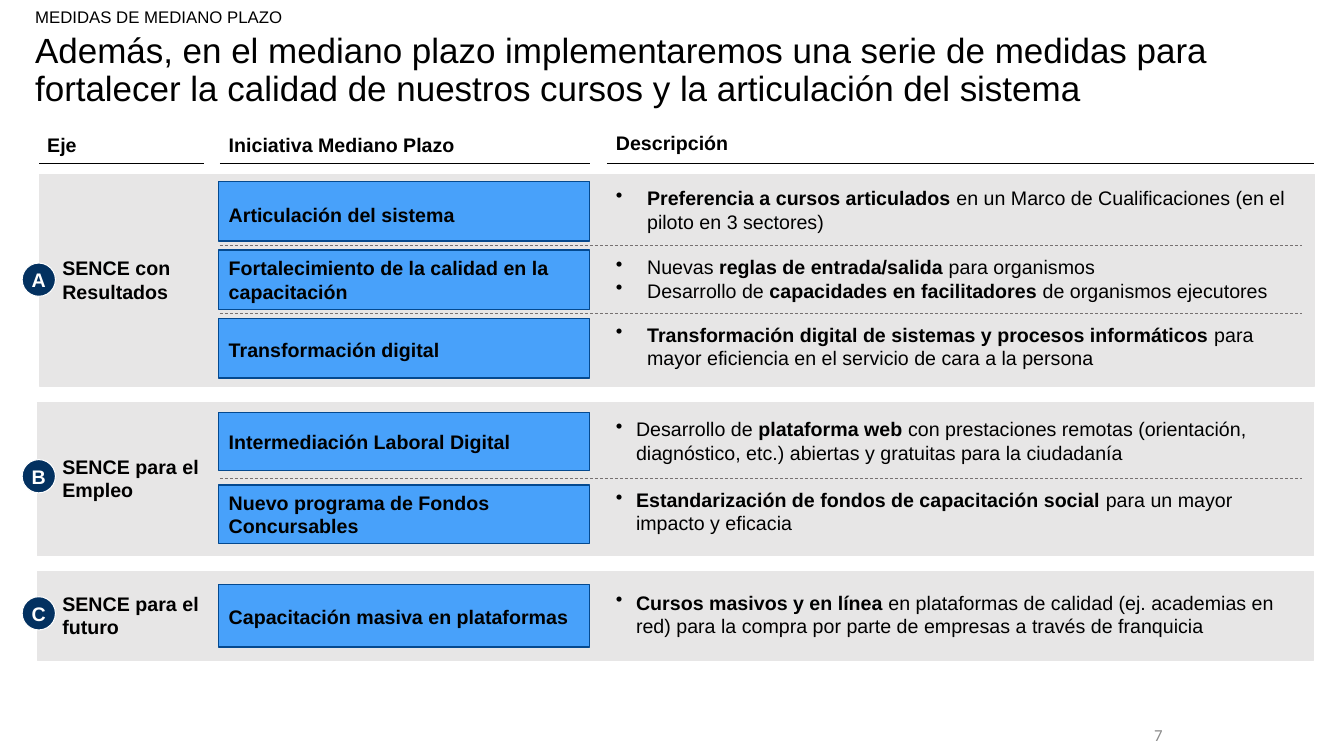
import pptx
import pptx.util
import pptx.dml.color
import pptx.enum.dml
import pptx.enum.shapes
import pptx.enum.text
from lxml import etree

Inches, Pt = pptx.util.Inches, pptx.util.Pt
SHAPE = pptx.enum.shapes.MSO_SHAPE
ALIGN = pptx.enum.text.PP_ALIGN
ANCHOR = pptx.enum.text.MSO_ANCHOR
COLORS = {"black": "000000", "white": "FFFFFF", "band": "E7E6E6", "blue": "48A1FA",
          "blue_edge": "04498F", "navy": "033160", "dash": "767171", "number": "8C8C8C"}

deck = pptx.Presentation()
deck.slide_width, deck.slide_height = Inches(13.33), Inches(7.5)
page = deck.slides.add_slide(deck.slide_layouts[6])


def color(name):
    return pptx.dml.color.RGBColor.from_string(COLORS[name])


def write(box, paragraphs, size=14, ink="black", font="Arial", align=ALIGN.LEFT,
          anchor=ANCHOR.TOP, wrap=True, indent=0):
    """Fill a box with paragraphs, each a list of (text, bold) runs; an indent adds bullets."""
    frame = box.text_frame
    frame.word_wrap = wrap
    frame.vertical_anchor = anchor
    for index, runs in enumerate(paragraphs):
        para = frame.add_paragraph() if index else frame.paragraphs[0]
        para.alignment = align
        if indent:
            props = para._p.get_or_add_pPr()
            props.set("marL", str(Inches(indent)))
            props.set("indent", str(-Inches(indent)))
            bullet = etree.SubElement(props, pptx.oxml.ns.qn("a:buChar"))
            bullet.set("char", "•")
        for text, bold in runs:
            span = para.add_run()
            span.text = text
            span.font.name, span.font.size, span.font.bold = font, Pt(size), bold
            span.font.color.rgb = color(ink)


# Title area
title = page.shapes.add_textbox(Inches(0.25), Inches(0.28), Inches(12.67), Inches(0.85))
write(title, [[("Además, en el mediano plazo implementaremos una serie de medidas para "
                "fortalecer la calidad de nuestros cursos y la articulación del sistema", False)]],
      size=25)
title.text_frame.paragraphs[0].line_spacing = 0.9

tracker = page.shapes.add_textbox(Inches(0.25), Inches(0.02), Inches(2.68), Inches(0.3))
write(tracker, [[("MEDIDAS DE MEDIANO PLAZO", False)]], size=12, wrap=False)

number = page.shapes.add_textbox(Inches(8.63), Inches(7.09), Inches(3), Inches(0.4))
write(number, [[("7", False)]], size=12, ink="number", font="Calibri",
      align=ALIGN.RIGHT, anchor=ANCHOR.MIDDLE)

# Column headings: text, left, top, width
for heading, left, top, width in [("Eje", 0.37, 1.27, 1.24),
                                  ("Iniciativa Mediano Plazo", 2.17, 1.27, 3.01),
                                  ("Descripción", 6.01, 1.25, 2.09)]:
    box = page.shapes.add_textbox(Inches(left), Inches(top), Inches(width), Inches(0.34))
    write(box, [[(heading, True)]])

# Axes: letter, name, band (left, top, width, height), badge top, label top
axes = [
    ("A", "SENCE con Resultados", (0.39, 1.73, 12.65, 2.1), 2.61, 2.49),
    ("B", "SENCE para el Empleo", (0.37, 3.99, 12.66, 1.52), 4.56, 4.46),
    ("C", "SENCE para el futuro", (0.37, 5.67, 12.66, 0.88), 5.92, 5.82),
]
for letter, name, place, badge_top, label_top in axes:
    band = page.shapes.add_shape(SHAPE.RECTANGLE, *map(Inches, place))
    badge = page.shapes.add_shape(SHAPE.OVAL, Inches(0.22), Inches(badge_top),
                                  Inches(0.33), Inches(0.33))
    for shape, fill, edge, weight in [(band, "band", "band", 1), (badge, "navy", "white", 0.75)]:
        shape.shadow.inherit = False
        shape.fill.solid()
        shape.fill.fore_color.rgb = color(fill)
        shape.line.color.rgb = color(edge)
        shape.line.width = Pt(weight)
    frame = badge.text_frame
    frame.margin_left = frame.margin_right = frame.margin_top = frame.margin_bottom = 0
    write(badge, [[(letter, True)]], ink="white", align=ALIGN.CENTER,
          anchor=ANCHOR.MIDDLE, wrap=False)
    label = page.shapes.add_textbox(Inches(0.52), Inches(label_top), Inches(1.6), Inches(0.57))
    write(label, [[(name, True)]])

# Initiatives: name, box top, box height, top margin, description top, indent, description
initiatives = [
    ("Articulación del sistema", 1.8, 0.59, 0.12, 1.8, 0.31,
     [[("Preferencia a cursos articulados ", True),
       ("en un Marco de Cualificaciones (en el piloto en 3 sectores)", False)]]),
    ("Fortalecimiento de la calidad en la capacitación", 2.48, 0.59, 0.05, 2.48, 0.31,
     [[("Nuevas", False), (" reglas de entrada/salida ", True), ("para organismos", False)],
      [("Desarrollo de ", False), ("capacidades en facilitadores ", True),
       ("de organismos ejecutores", False)]]),
    ("Transformación digital", 3.16, 0.59, 0.08, 3.15, 0.31,
     [[("Transformación digital de sistemas y procesos informáticos ", True),
       ("para mayor eficiencia en el servicio de cara a la persona", False)]]),
    ("Intermediación Laboral Digital", 4.09, 0.58, 0.05, 4.09, 0.2,
     [[("Desarrollo de ", False), ("plataforma web ", True),
       ("con prestaciones remotas (orientación, diagnóstico, etc.) abiertas y gratuitas "
        "para la ciudadanía", False)]]),
    ("Nuevo programa de Fondos Concursables", 4.81, 0.58, 0.05, 4.79, 0.2,
     [[("Estandarización de fondos de capacitación social ", True),
       ("para un mayor impacto y eficacia", False)]]),
    ("Capacitación masiva en plataformas", 5.8, 0.62, 0.07, 5.81, 0.2,
     [[("Cursos masivos y en línea ", True),
       ("en plataformas de calidad (ej. academias en red) para la compra por parte de "
        "empresas a través de franquicia", False)]]),
]
for name, top, height, margin, text_top, indent, description in initiatives:
    box = page.shapes.add_shape(SHAPE.RECTANGLE, Inches(2.17), Inches(top),
                                Inches(3.68), Inches(height))
    box.shadow.inherit = False
    box.fill.solid()
    box.fill.fore_color.rgb = color("blue")
    box.line.color.rgb = color("blue_edge")
    box.line.width = Pt(1)
    box.text_frame.margin_top = Inches(margin)
    write(box, [[(name, True)]], anchor=ANCHOR.MIDDLE)
    detail = page.shapes.add_textbox(Inches(6.01), Inches(text_top), Inches(7.02), Inches(0.57))
    write(detail, description, indent=indent)

# Heading rules and dashed row dividers: left, right, height on the page
heading_rules = [(0.39, 2.02, 1.62), (2.18, 5.85, 1.62), (6.02, 13.03, 1.62)]
dividers = [(2.18, 12.91, y) for y in (2.43, 3.11, 4.75)]
for rules, ink, weight, dash in [(heading_rules, "black", 1, None),
                                 (dividers, "dash", 0.5, pptx.enum.dml.MSO_LINE.DASH)]:
    for left, right, y in rules:
        rule = page.shapes.add_connector(pptx.enum.shapes.MSO_CONNECTOR.STRAIGHT,
                                         Inches(left), Inches(y), Inches(right), Inches(y))
        rule.line.color.rgb = color(ink)
        rule.line.width = Pt(weight)
        if dash:
            rule.line.dash_style = dash
        etree.SubElement(rule._element.spPr, pptx.oxml.ns.qn("a:effectLst"))

deck.save("out.pptx")
